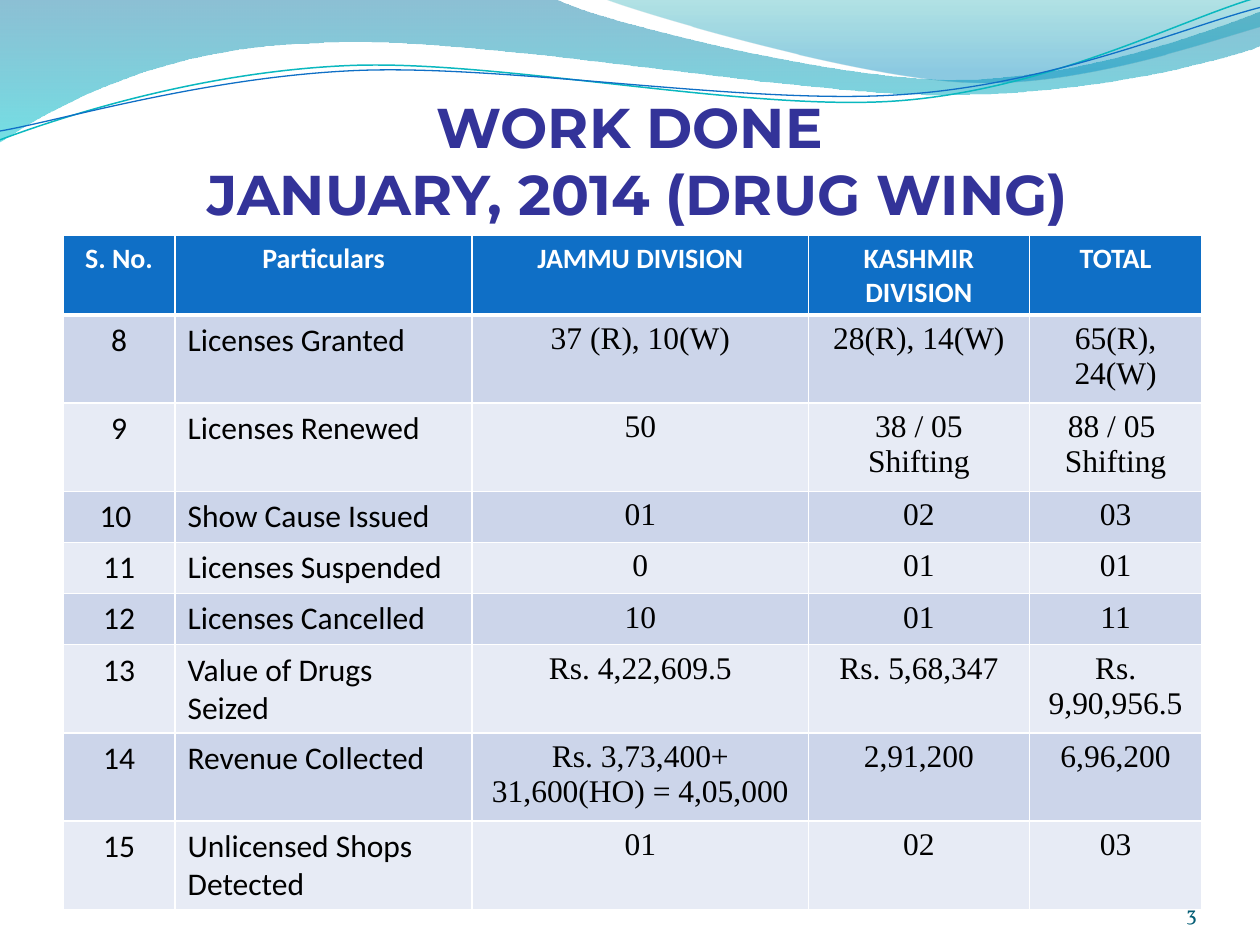
import math
import pptx
import pptx.util
import pptx.dml.color
import pptx.enum.text
import pptx.oxml
import pptx.oxml.ns

Cm, Pt = pptx.util.Cm, pptx.util.Pt
qn, nsdecls = pptx.oxml.ns.qn, pptx.oxml.ns.nsdecls
ALIGN = pptx.enum.text.PP_ALIGN
ANCHOR = pptx.enum.text.MSO_ANCHOR

COLORS = {
    "white": "FFFFFF", "black": "000000", "title": "333399", "number": "045D75",
    "header": "0F6FC6", "odd": "CCD5EA", "even": "E7EBF5",
    "ocean": "0074A1", "aqua": "00C6CF", "teal": "00A1A9", "sky": "008BBF",
    "teal line": "0AB8BF", "blue line": "0F6FC6",
}

TITLE = "WORK DONE\v JANUARY, 2014 (DRUG WING)"
PAGE_NUMBER = "3"
HEADER = ["S. No.", "Particulars", "JAMMU DIVISION", "KASHMIR DIVISION", "TOTAL"]
ROWS = [
    ["8", "Licenses Granted", "37 (R), 10(W)", "28(R), 14(W)", " 65(R), \n24(W)"],
    ["9", "Licenses Renewed", "50", "38 / 05 Shifting", "88 / 05  Shifting"],
    ["10 ", "Show Cause Issued", "01", "02", "03"],
    ["11", "Licenses Suspended", "0", "01", "01"],
    ["12", "Licenses Cancelled", "10", "01", "11"],
    ["13", "Value of Drugs Seized", "Rs. 4,22,609.5", "Rs. 5,68,347", "Rs. 9,90,956.5"],
    ["14", "Revenue Collected", "Rs. 3,73,400+ 31,600(HO) = 4,05,000", "2,91,200", "6,96,200"],
    ["15", "Unlicensed Shops Detected", "01", "02", "03"],
]
COLUMN_WIDTHS = [2.26, 5.99, 6.78, 4.45, 3.48]
ROW_HEIGHTS = [1.57, 1.03, 1, 1.03, 1.03, 1.03, 1.03, 1.74, 1.74]
TABLE_HEIGHT = 13.59

# Each path holds a start point, then straight (2 values) or cubic (6 values) steps.
WAVES = [
    {"path": [(0, 0), (4.4, -0.01), (4.76, 0.17, 6.64, 0.63, 7.58, 0.63),
              (8.53, 0.63, 9.58, 0.26, 10, 0.09), (10.01, 0.36),
              (9.83, 0.44, 8.7, 0.76, 7.46, 0.75), (6.22, 0.75, 3.82, 0.28, 2.57, 0.34),
              (1.29, 0.36, 0.46, 0.83, -0.01, 1.13), (0, 0)],
     "stops": [(0, "ocean", 45), (1, "aqua", 55)]},
    {"path": [(4.79, -0.01), (5.09, 0.11, 6.82, 0.62, 7.69, 0.65),
              (8.56, 0.69, 9.61, 0.32, 10, 0.21), (10, 0), (4.79, -0.01)],
     "stops": [(0, "teal", 30), (0.8, "sky", 45)]},
    {"path": [(0, 1.11), (0.48, 0.93, 1.58, 0.57, 2.77, 0.52),
              (3.95, 0.47, 5.93, 0.89, 7.13, 0.8), (8.33, 0.71, 9.38, 0.15, 9.98, -0.02)],
     "line": ("teal line", 0.85), "center": (4.99, 0.58)},
    {"path": [(0, 1.04), (0.47, 0.96, 1.64, 0.61, 2.83, 0.56),
              (4.03, 0.51, 5.97, 0.84, 7.17, 0.75), (8.36, 0.67, 9.41, 0.21, 10, 0.06)],
     "line": ("blue line", 0.75), "center": (5, 0.59)},
]
TILT = -2.7


def rgb(name):
    return pptx.dml.color.RGBColor.from_string(COLORS[name])


def level(point, center):
    angle = math.radians(-TILT)
    dx, dy = point[0] - center[0], point[1] - center[1]
    return (center[0] + dx * math.cos(angle) - dy * math.sin(angle),
            center[1] + dx * math.sin(angle) + dy * math.cos(angle))


def bend(wave, steps):
    outline = next(wave._element.iter(qn("a:path")))
    segments = iter(outline.findall(qn("a:lnTo")))
    for step in steps:
        first = next(segments)
        if len(step) == 2:
            continue
        curve = pptx.oxml.parse_xml(f'<a:cubicBezTo {nsdecls("a")}/>')
        first.addprevious(curve)
        for segment in (first, next(segments), next(segments)):
            curve.append(segment[0])
            outline.remove(segment)


def add_wave(page, path, stops=None, line=None, center=None):
    points = [step[i:i + 2] for step in path for i in range(0, len(step), 2)]
    if center:
        points = [level(point, center) for point in points]
    points = [(Cm(x * 2.54), Cm(y * 2.54)) for x, y in points]
    builder = page.shapes.build_freeform(*points[0])
    builder.add_line_segments(points[1:], close=stops is not None)
    wave = builder.convert_to_shape()
    bend(wave, path[1:])
    wave.shadow.inherit = False
    if line:
        wave.rotation = TILT
        wave.fill.background()
        wave.line.color.rgb = rgb(line[0])
        wave.line.width = Pt(line[1])
        return
    wave.line.fill.background()
    wave.fill.gradient()
    wave.fill.gradient_angle = 270
    for stop, (position, color, _) in zip(wave.fill.gradient_stops, stops):
        stop.position = position
        stop.color.rgb = rgb(color)
    tones = list(wave._element.spPr.iter(qn("a:srgbClr")))
    for tone, (_, _, opacity) in zip(tones, stops):
        tone.append(pptx.oxml.parse_xml(
            f'<a:alpha {nsdecls("a")} val="{opacity * 1000}"/>'))


def write(frame, text, color, align, **font):
    frame.text = text
    for para in frame.paragraphs:
        para.alignment = align
        for span in para.runs:
            span.font.color.rgb = rgb(color)
            for key, value in font.items():
                setattr(span.font, key, value)


def add_text(page, place, text, color, align, margins, **font):
    box = page.shapes.add_textbox(*map(Cm, place))
    frame = box.text_frame
    settings = {"word_wrap": True, "vertical_anchor": ANCHOR.BOTTOM, **margins}
    for key, value in settings.items():
        setattr(frame, key, value)
    write(frame, text, color, align, **font)


def add_borders(cell, top, bottom):
    properties = cell._tc.get_or_add_tcPr()
    widths = {"lnL": 1, "lnR": 1, "lnT": top, "lnB": bottom}
    for index, (side, width) in enumerate(widths.items()):
        properties.insert(index, pptx.oxml.parse_xml(
            f'<a:{side} {nsdecls("a")} w="{Pt(width)}"><a:solidFill>'
            f'<a:srgbClr val="{COLORS["white"]}"/></a:solidFill></a:{side}>'))


def add_work_table(page):
    rows = [HEADER] + ROWS
    holder = page.shapes.add_table(
        len(rows), len(HEADER), Cm(1.27), Cm(4.74),
        Cm(sum(COLUMN_WIDTHS)), Cm(TABLE_HEIGHT))
    table = holder.table
    for column, width in zip(table.columns, COLUMN_WIDTHS):
        column.width = Cm(width)
    for row, height in zip(table.rows, ROW_HEIGHTS):
        row.height = Cm(height)
    holder.height = Cm(TABLE_HEIGHT)
    for r, texts in enumerate(rows):
        fill = "header" if r == 0 else "odd" if r % 2 else "even"
        for c, text in enumerate(texts):
            cell = table.cell(r, c)
            cell.fill.solid()
            cell.fill.fore_color.rgb = rgb(fill)
            add_borders(cell, 3 if r == 1 else 1, 3 if r == 0 else 1)
            write(cell.text_frame, text, "black" if r else "white",
                  ALIGN.LEFT if r and c == 1 else ALIGN.CENTER,
                  name="Times New Roman" if r and c > 1 else "Calibri",
                  size=Pt(18 if r else 16), bold=r == 0)


def main():
    deck = pptx.Presentation()
    deck.slide_width, deck.slide_height = Cm(25.4), Cm(19.05)
    page = deck.slides.add_slide(deck.slide_layouts[6])
    for wave in WAVES:
        add_wave(page, **wave)
    flat = dict.fromkeys(["margin_left", "margin_right", "margin_top", "margin_bottom"], 0)
    add_text(page, (1.27, 1.96, 22.86, 2.62), TITLE, "title", ALIGN.CENTER,
             {**flat, "margin_top": Cm(0.13)}, name="Montserrat", size=Pt(32), bold=True)
    add_work_table(page)
    add_text(page, (22.02, 17.65, 2.11, 1.02), PAGE_NUMBER, "number", ALIGN.RIGHT,
             flat, name="Vollkorn", size=Pt(12))
    deck.save("out.pptx")


if __name__ == "__main__":
    main()
